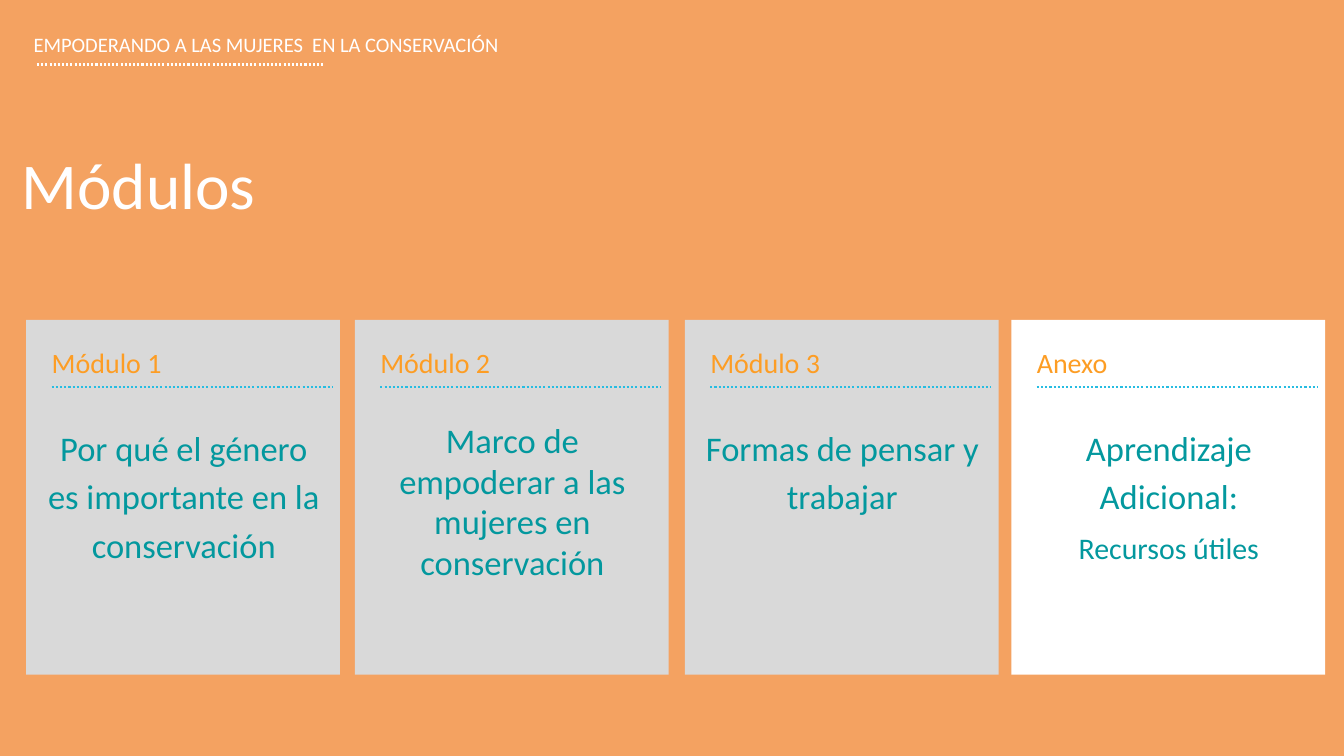
from lxml.etree import SubElement
from pptx import Presentation
from pptx.dml.color import RGBColor
from pptx.enum.dml import MSO_LINE
from pptx.enum.shapes import MSO_CONNECTOR, MSO_SHAPE
from pptx.enum.text import MSO_ANCHOR, MSO_AUTO_SIZE, PP_ALIGN
from pptx.oxml.ns import qn
from pptx.util import Inches, Pt

# Content
HEADER = "EMPODERANDO A LAS MUJERES  EN LA CONSERVACIÓN"
TITLE = "Módulos"
# left edge, fill, label, [(text, size)], line spacing
CARDS = [
    (0.39, "grey", "Módulo 1",
     [("Por qué el género es importante en la conservación", 37)], 51.8),
    (5.28, "grey", "Módulo 2",
     [("Marco de empoderar a las mujeres en conservación", 37)], 43.4),
    (10.19, "grey", "Módulo 3", [("Formas de pensar y trabajar", 37)], 51.8),
    (15.05, "white", "Anexo",
     [("Aprendizaje Adicional:", 37), ("Recursos útiles", 32)], 51.8),
]

COLORS = {"back": "F4A261", "grey": "D9D9D9", "white": "FFFFFF",
          "label": "FD9D24", "teal": "03989E", "dots": "26BDE2"}
FONT = "Calibri"
CARD_TOP, CARD_W, CARD_H = 4.76, 4.67, 5.28
TEXT_W = 4.17
LABEL_INDENT, BODY_INDENT = 0.38, 0.26


def rgb(name):
    return RGBColor.from_string(COLORS[name])


def write(sp, box, lines, color, spacing, align=PP_ALIGN.LEFT):
    """Place a text shape and fill it with (text, size) paragraphs."""
    sp.left, sp.top, sp.width, sp.height = map(Inches, box)
    tf = sp.text_frame
    tf.word_wrap = True
    tf.auto_size = MSO_AUTO_SIZE.NONE
    tf.vertical_anchor = MSO_ANCHOR.TOP
    tf.margin_left = tf.margin_top = tf.margin_right = tf.margin_bottom = 0
    tf.text = "\n".join(text for text, _ in lines)
    for p, (_, size) in zip(tf.paragraphs, lines):
        p.alignment = align
        p.line_spacing = Pt(spacing)
        p.space_before = Pt(0)
        font = p.runs[0].font
        font.name, font.size = FONT, Pt(size)
        font.color.rgb = rgb(color)


def add_text(slide, box, *args):
    write(slide.shapes.add_textbox(0, 0, 0, 0), box, *args)


def add_dots(slide, x, y, width, color):
    line = slide.shapes.add_connector(
        MSO_CONNECTOR.STRAIGHT, Inches(x), Inches(y), Inches(x + width), Inches(y))
    line.line.color.rgb = rgb(color)
    line.line.width = Pt(2.25)
    line.line.dash_style = MSO_LINE.ROUND_DOT
    SubElement(line._element.spPr, qn("a:effectLst"))


def add_card(slide, x, fill, label, lines, spacing):
    sp = slide.shapes.add_shape(MSO_SHAPE.RECTANGLE, Inches(x), Inches(CARD_TOP),
                                Inches(CARD_W), Inches(CARD_H))
    sp.shadow.inherit = False
    sp.fill.solid()
    sp.fill.fore_color.rgb = rgb(fill)
    sp.line.fill.background()
    label_x = x + LABEL_INDENT
    add_dots(slide, label_x, CARD_TOP + 1, TEXT_W, "dots")
    add_text(slide, (label_x, CARD_TOP + 0.3, TEXT_W, 0.57),
             [(label, 30)], "label", 42)
    add_text(slide, (x + BODY_INDENT, CARD_TOP + 1.49, TEXT_W, 2.89),
             lines, "teal", spacing, PP_ALIGN.CENTER)


prs = Presentation()
prs.slide_width, prs.slide_height = Inches(20), Inches(11.25)
s = prs.slides.add_slide(prs.slide_layouts[5])
s.background.fill.solid()
s.background.fill.fore_color.rgb = rgb("back")

# Header and title
add_text(s, (0.5, 0.48, 10.64, 0.37), [(HEADER, 22)], "white", 26.4)
add_dots(s, 0.55, 0.96, 4.28, "white")
write(s.shapes.title, (0.32, 2.14, 10.64, 1.17), [(TITLE, 70)], "white", 84)

# Module cards
for card in CARDS:
    add_card(s, *card)

prs.save("out.pptx")
